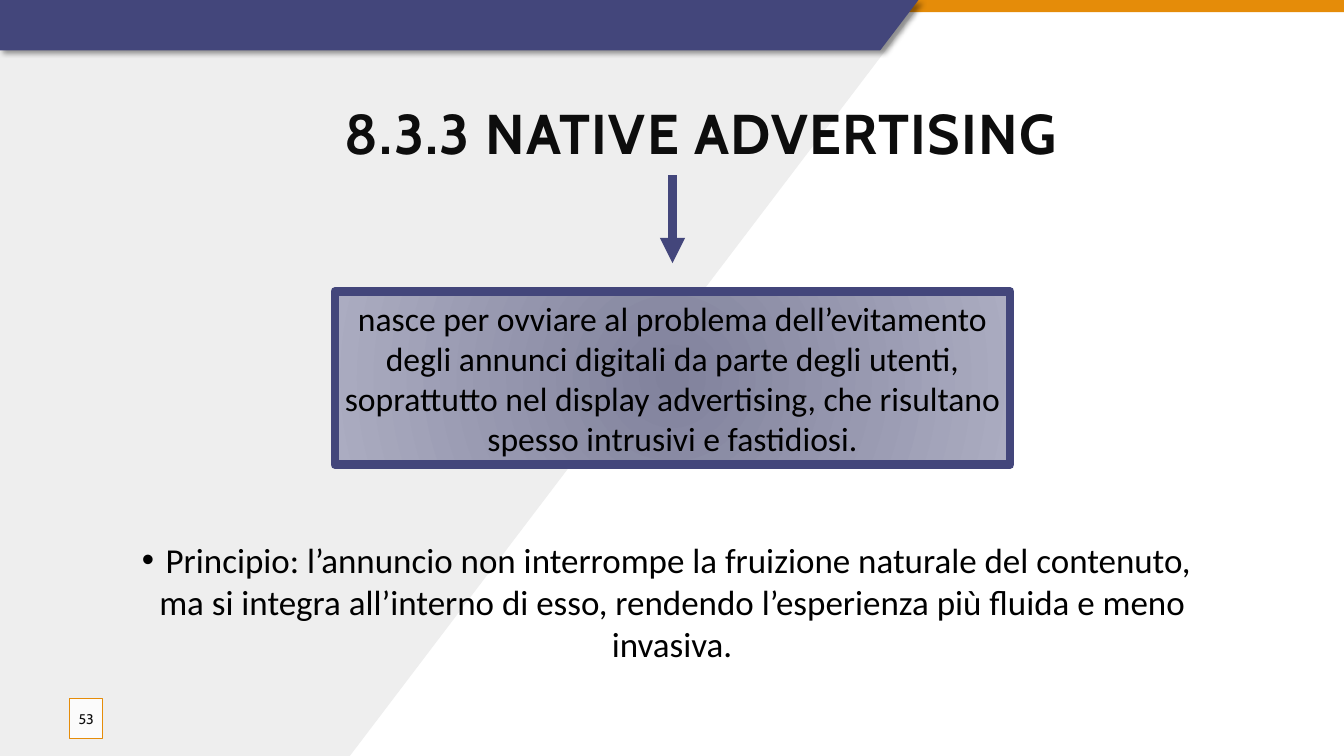
"""Build the slide that introduces native advertising."""
from dataclasses import dataclass

import lxml.etree
import pptx
import pptx.dml.color
import pptx.enum.shapes
import pptx.enum.text
import pptx.oxml
import pptx.oxml.ns
import pptx.util

TITLE = "8.3.3 NATIVE ADVERTISING"
REASON = (
    "nasce per ovviare al problema dell’evitamento degli annunci digitali da parte "
    "degli utenti, soprattutto nel display advertising, che risultano spesso "
    "intrusivi e fastidiosi."
)
PRINCIPLE = (
    "Principio: l’annuncio non interrompe la fruizione naturale del contenuto, "
    "ma si integra all’interno di esso, rendendo l’esperienza più fluida e meno invasiva."
)
PAGE_NUMBER = "53"

EMU_PER_PX = 9144
SLIDE_WIDTH, SLIDE_HEIGHT = 1333, 750
BACKDROP = [(0, 0), (911, 0), (911, 7), (347, 750), (0, 750)]
BANNER = [(0, 0), (911, 0), (873, 50), (0, 50)]
ACCENT_BOX = (0, 0, SLIDE_WIDTH, 12)
TITLE_BOX = (332, 93, 1182, 77)
PAGE_BOX = (69, 693, 33, 40)
REASON_BOX = (332, 289, 670, 172)
PRINCIPLE_BOX = (121, 529, 1091, 94)
ARROW_TOP, ARROW_BOTTOM = 174, 261


@dataclass(frozen=True)
class Theme:
    """Colours, fonts and type sizes."""
    navy: str = "43467B"
    orange: str = "E58C09"
    grey: str = "EEEEEE"
    white: str = "FFFFFF"
    heading: str = "0D0D0D"
    body: str = "000000"
    glow_inner: str = "81829C"
    glow_outer: str = "ABACC1"
    heading_font: str = "Cabin"
    body_font: str = "Calibri"
    title_size: int = 40
    reason_size: int = 24
    principle_size: int = 25
    page_size: int = 10
    heavy_line: float = 6
    thin_line: float = 0.75


THEME = Theme()
RECTANGLE = pptx.enum.shapes.MSO_SHAPE.RECTANGLE
CENTER = pptx.enum.text.PP_ALIGN.CENTER
MIDDLE = pptx.enum.text.MSO_ANCHOR.MIDDLE
GROW = pptx.enum.text.MSO_AUTO_SIZE.SHAPE_TO_FIT_TEXT


def px(length):
    """Turn px into EMU."""
    return pptx.util.Emu(length * EMU_PER_PX)


def rgb(color):
    """Turn a hex string into a colour."""
    return pptx.dml.color.RGBColor.from_string(color)


def xml(markup):
    """Parse one DrawingML element."""
    opening, rest = markup.split(" ", 1)
    return pptx.oxml.parse_xml(f'{opening} {pptx.oxml.ns.nsdecls("a")} {rest}')


def paint(shape, fill, line=None, width=0):
    """Set fill and outline, without a shadow."""
    shape.shadow.inherit = False
    shape.fill.solid()
    shape.fill.fore_color.rgb = rgb(fill)
    if line:
        shape.line.color.rgb = rgb(line)
        shape.line.width = pptx.util.Pt(width)
    else:
        shape.line.fill.background()


def add_box(slide, box, fill, line=None, width=0):
    """Add a painted rectangle."""
    shape = slide.shapes.add_shape(RECTANGLE, *map(px, box))
    paint(shape, fill, line, width)
    return shape


def add_outline(slide, points, fill):
    """Add a painted polygon."""
    builder = slide.shapes.build_freeform(*points[0], scale=EMU_PER_PX)
    builder.add_line_segments(points[1:], close=True)
    shape = builder.convert_to_shape()
    paint(shape, fill)
    return shape


def write(shape, text, size, font, color, align=None, bold=False):
    """Write one formatted paragraph and return it."""
    frame = shape.text_frame
    frame.word_wrap = True
    frame.text = text
    paragraph = frame.paragraphs[0]
    paragraph.alignment = align
    style = paragraph.runs[0].font
    style.size, style.name, style.bold = pptx.util.Pt(size), font, bold
    style.color.rgb = rgb(color)
    return paragraph


def add_background(slide):
    """Add the grey field, the orange strip and the banner."""
    add_outline(slide, BACKDROP, THEME.grey)
    add_box(slide, ACCENT_BOX, THEME.orange)
    banner = add_outline(slide, BANNER, THEME.navy)
    effects = banner._element.spPr.find(pptx.oxml.ns.qn("a:effectLst"))
    blur, distance = pptx.util.Pt(4), pptx.util.Pt(3)
    effects.append(xml(
        f'<a:outerShdw blurRad="{blur}" dist="{distance}" dir="2700000" algn="tl" '
        f'rotWithShape="0"><a:srgbClr val="{THEME.body}"><a:alpha val="40000"/>'
        '</a:srgbClr></a:outerShdw>'))


def add_title(slide):
    """Add the heading."""
    title = slide.shapes.add_textbox(*map(px, TITLE_BOX))
    paragraph = write(title, TITLE, THEME.title_size, THEME.heading_font,
                      THEME.heading, bold=True)
    paragraph.runs[0].font._element.set("spc", "100")


def add_page_number(slide):
    """Add the framed page number."""
    page = add_box(slide, PAGE_BOX, THEME.white, THEME.orange, THEME.thin_line)
    color = page._element.spPr.find(".//" + pptx.oxml.ns.qn("a:srgbClr"))
    color.append(xml('<a:alpha val="82000"/>'))
    frame = page.text_frame
    frame.margin_left = frame.margin_right = 0
    frame.vertical_anchor = MIDDLE
    write(page, PAGE_NUMBER, THEME.page_size, THEME.heading_font, THEME.heading, CENTER)


def add_reason(slide):
    """Add the framed statement with its radial gradient."""
    reason = add_box(slide, REASON_BOX, THEME.glow_inner, THEME.navy, THEME.heavy_line)
    properties = reason._element.spPr
    solid = properties.find(pptx.oxml.ns.qn("a:solidFill"))
    properties.replace(solid, xml(
        '<a:gradFill rotWithShape="1"><a:gsLst>'
        f'<a:gs pos="0"><a:srgbClr val="{THEME.glow_inner}"/></a:gs>'
        f'<a:gs pos="100000"><a:srgbClr val="{THEME.glow_outer}"/></a:gs></a:gsLst>'
        '<a:path path="circle"><a:fillToRect l="100000" t="100000" r="100000" '
        'b="100000"/></a:path></a:gradFill>'))
    lxml.etree.SubElement(reason.line._get_or_add_ln(), pptx.oxml.ns.qn("a:round"))
    write(reason, REASON, THEME.reason_size, THEME.body_font, THEME.body, CENTER)
    reason.text_frame.auto_size = GROW


def add_principle(slide):
    """Add the bulleted principle."""
    principle = slide.shapes.add_textbox(*map(px, PRINCIPLE_BOX))
    paragraph = write(principle, PRINCIPLE, THEME.principle_size, THEME.body_font,
                      THEME.body, CENTER)
    principle.text_frame.auto_size = GROW
    properties = paragraph._p.get_or_add_pPr()
    properties.append(xml('<a:buFont typeface="Arial"/>'))
    properties.append(xml('<a:buChar char="•"/>'))


def add_arrow(slide):
    """Add the arrow from the heading towards the statement."""
    left, _, width, _ = REASON_BOX
    middle = left + width // 2
    arrow = slide.shapes.add_connector(
        pptx.enum.shapes.MSO_CONNECTOR.STRAIGHT,
        *map(px, (middle, ARROW_TOP, middle, ARROW_BOTTOM)))
    arrow.line.color.rgb = rgb(THEME.navy)
    arrow.line.width = pptx.util.Pt(THEME.heavy_line)
    arrow.line._get_or_add_ln().append(xml('<a:tailEnd type="triangle"/>'))
    lxml.etree.SubElement(arrow._element.spPr, pptx.oxml.ns.qn("a:effectLst"))


def main():
    """Create and save the presentation."""
    presentation = pptx.Presentation()
    presentation.slide_width, presentation.slide_height = px(SLIDE_WIDTH), px(SLIDE_HEIGHT)
    slide = presentation.slides.add_slide(presentation.slide_layouts[6])
    for add_part in (add_background, add_title, add_page_number, add_reason,
                     add_principle, add_arrow):
        add_part(slide)
    presentation.save("out.pptx")


if __name__ == "__main__":
    main()
